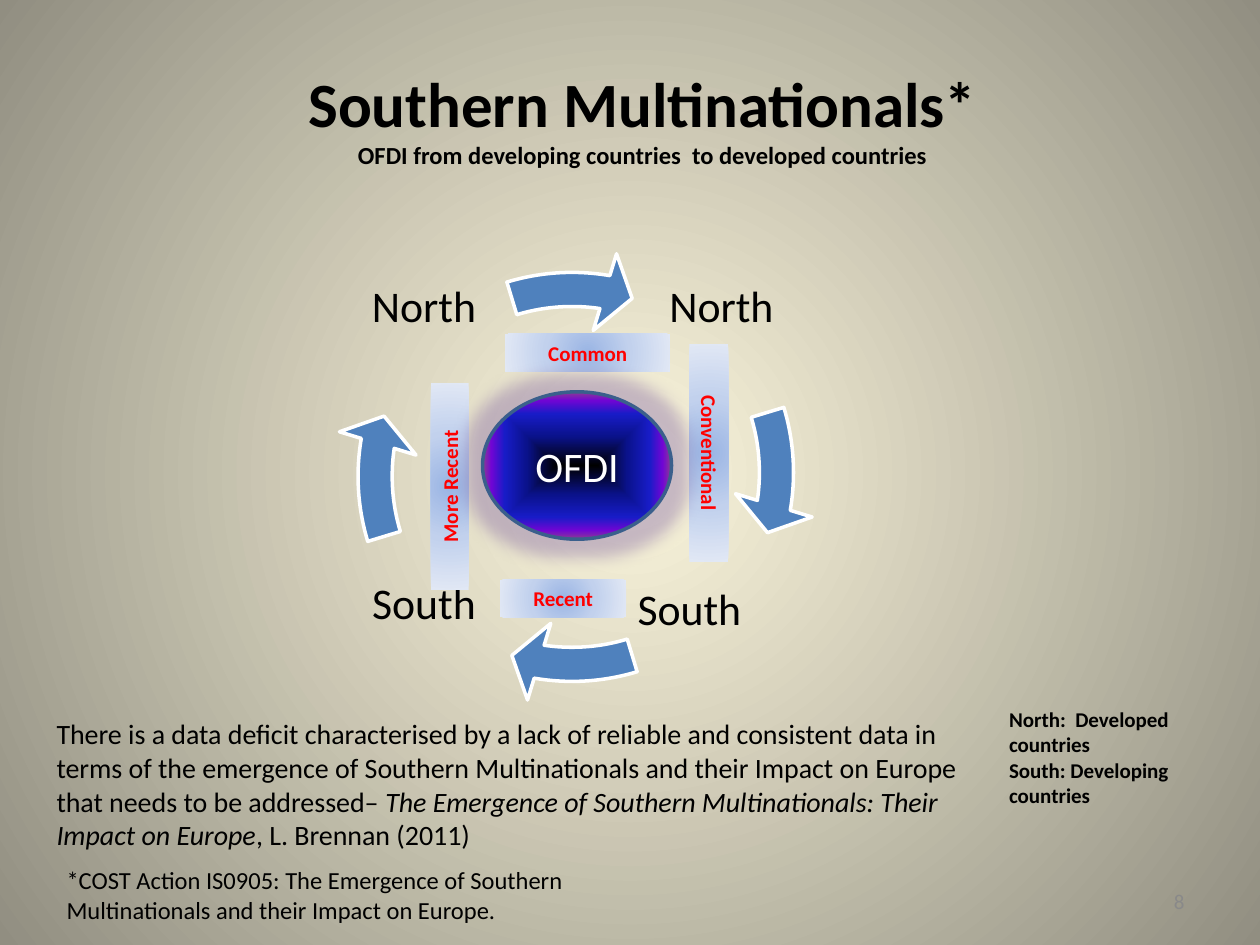
import pptx
import pptx.util
import pptx.dml.color
import pptx.enum.shapes
import pptx.enum.text
import pptx.oxml
import pptx.oxml.ns
from dataclasses import dataclass

Inches = pptx.util.Inches
SHAPES = pptx.enum.shapes.MSO_SHAPE
ALIGN = pptx.enum.text.PP_ALIGN
ANCHOR = pptx.enum.text.MSO_ANCHOR
qn = pptx.oxml.ns.qn


@dataclass(frozen=True)
class Theme:
    font: str = "Calibri"
    ink: str = "000000"
    pale: str = "FFFFFF"
    accent: str = "FF0000"
    muted: str = "898989"
    arrow: str = "4F81BD"
    rim: str = "3A5F8C"
    halo: str = "8064A2"
    backdrop: tuple = ((0, "FCF7DD"), (100, "918E81"))
    band: tuple = ((0, "9AB5E4"), (50, "C2D1ED"), (100, "E1E8F5"))
    core: tuple = ((0, "000000"), (40, "0A128C"), (70, "181CC7"),
                   (88, "7005D4"), (100, "8C3D91"))
    title: int = 36
    pole: int = 25
    hub: int = 24
    body: int = 16
    note: int = 14
    small: int = 12


theme = Theme()
bold = {"bold": True}
italic = {"italic": True}

heading = [[("Southern Multinationals*", theme.title, bold)],
           [("OFDI from developing countries  to developed countries", theme.note, bold)]]
legend = [[("North:  Developed countries", theme.small, bold)],
          [("South: Developing countries", theme.small, bold)]]
footnote = [[("*COST Action IS0905: The Emergence of Southern Multinationals "
              "and their Impact on Europe.", theme.note, {})]]
statement = [[
    ("There is a data deficit characterised by a lack of reliable and consistent data "
     "in terms of the emergence of Southern Multinationals and their Impact on Europe "
     "that needs to be addressed– ", theme.body, {}),
    ("The Emergence of Southern Multinationals: Their Impact on Europe", theme.body, italic),
    (", L. Brennan (2011)", theme.body, {})]]
page_number = [[("8", theme.small, {})]]

passages = [
    (heading, (1.42, 0.36, 7.36, 1.14), ALIGN.CENTER, ANCHOR.MIDDLE, theme.ink),
    (legend, (7.91, 5.56, 1.81, 0.91), ALIGN.LEFT, ANCHOR.TOP, theme.ink),
    (footnote, (0.43, 6.82, 5.04, 0.57), ALIGN.LEFT, ANCHOR.TOP, theme.ink),
    (statement, (0.35, 5.64, 7.48, 1.18), ALIGN.LEFT, ANCHOR.TOP, theme.ink),
    (page_number, (7.17, 6.95, 2.33, 0.4), ALIGN.RIGHT, ANCHOR.MIDDLE, theme.muted),
]
poles = [("North", 5.03, 1.75, ALIGN.CENTER), ("South", 5.03, 4.16, ALIGN.LEFT),
         ("South", 2.67, 4.11, ALIGN.CENTER), ("North", 2.67, 1.75, ALIGN.CENTER)]
pole_size = 1.39
flows = [(2.56, 1.79), (2.58, 1.67), (2.66, 1.82), (2.58, 1.98)]
flow_size = 3.92
quarter_turn, full_turn = 54, 216
flow_head, flow_tail = 5.483, -10.139
trends = [("Common", (4.01, 2.65, 1.31, 0.3), 0),
          ("Conventional", (4.76, 3.44, 1.73, 0.31), 90),
          ("Recent", (3.97, 4.6, 1, 0.3), 0),
          ("More Recent", (2.75, 3.71, 1.64, 0.3), 270)]
hub_place = (3.83, 3.11, 1.5, 1.17)


def rgb(value):
    return pptx.dml.color.RGBColor.from_string(value)


def apply(target, values):
    for key, value in values.items():
        setattr(target, key, value)


def radial(fill, root, stops, shade="circle"):
    fill.solid()
    solid = root.find(".//" + qn("a:solidFill"))
    marks = "".join(f'<a:gs pos="{at * 1000}"><a:srgbClr val="{color}"/></a:gs>'
                    for at, color in stops)
    gradient = pptx.oxml.parse_xml(
        f'<a:gradFill {pptx.oxml.ns.nsdecls("a")} rotWithShape="1"><a:gsLst>{marks}</a:gsLst>'
        f'<a:path path="{shade}"><a:fillToRect l="50000" t="50000" r="50000" b="50000"/>'
        '</a:path></a:gradFill>')
    solid.getparent().replace(solid, gradient)


def write(shape, paragraphs, color, align, frame_format, spacing=None):
    frame = shape.text_frame
    apply(frame, {"word_wrap": True, **frame_format})
    for index, runs in enumerate(paragraphs):
        paragraph = frame.add_paragraph() if index else frame.paragraphs[0]
        apply(paragraph, {"alignment": align, "line_spacing": spacing})
        for words, size, style in runs:
            run = paragraph.add_run()
            run.text = words
            apply(run.font, {"name": theme.font, "size": pptx.util.Pt(size), **style})
            run.font.color.rgb = rgb(color)


def add_text(slide, place, *content):
    write(slide.shapes.add_textbox(*map(Inches, place)), *content)


def add_figure(slide, preset, place, outline=None):
    figure = slide.shapes.add_shape(preset, *map(Inches, place))
    figure.shadow.inherit = False
    if outline:
        figure.line.color.rgb = rgb(outline)
        figure.line.width = pptx.util.Pt(2)
    else:
        figure.line.fill.background()
    return figure


def main():
    deck = pptx.Presentation()
    apply(deck, {"slide_width": Inches(10), "slide_height": Inches(7.5)})
    slide = deck.slides.add_slide(deck.slide_layouts[6])
    radial(slide.background.fill, slide.element, theme.backdrop)

    tight = {f"margin_{side}": Inches(0.03) for side in ("left", "right", "top", "bottom")}
    middle = {"vertical_anchor": ANCHOR.MIDDLE}
    for turn, ((pole, left, top, align), corner) in enumerate(zip(poles, flows)):
        add_text(slide, (left, top, pole_size, pole_size), [[(pole, theme.pole, {})]],
                 theme.ink, align, {**tight, **middle}, 0.9)
        flow = add_figure(slide, SHAPES.CIRCULAR_ARROW,
                          (*corner, flow_size, flow_size), theme.pale)
        flow.fill.solid()
        flow.fill.fore_color.rgb = rgb(theme.arrow)
        shift = turn * quarter_turn
        bends = (0.069, 4.656, flow_head + shift, (flow_tail + shift) % full_turn, 0.081)
        for index, bend in enumerate(bends):
            flow.adjustments[index] = bend

    for trend, place, angle in trends:
        band = add_figure(slide, SHAPES.RECTANGLE, place)
        band.rotation = angle
        radial(band.fill, band.element, theme.band)
        write(band, [[(trend, theme.small, bold)]], theme.accent, ALIGN.CENTER,
              {"vertical_anchor": ANCHOR.TOP})

    hub = add_figure(slide, SHAPES.OVAL, hub_place, theme.rim)
    radial(hub.fill, hub.element, theme.core, "shape")
    hub.element.spPr.find(qn("a:effectLst")).append(pptx.oxml.parse_xml(
        f'<a:glow {pptx.oxml.ns.nsdecls("a")} rad="{Inches(0.25)}">'
        f'<a:srgbClr val="{theme.halo}"><a:alpha val="40000"/></a:srgbClr></a:glow>'))
    write(hub, [[("OFDI", theme.hub, {})]], theme.pale, ALIGN.CENTER, middle)

    for words, place, align, anchor, color in passages:
        add_text(slide, place, words, color, align, {"vertical_anchor": anchor})
    deck.save("out.pptx")


if __name__ == "__main__":
    main()
